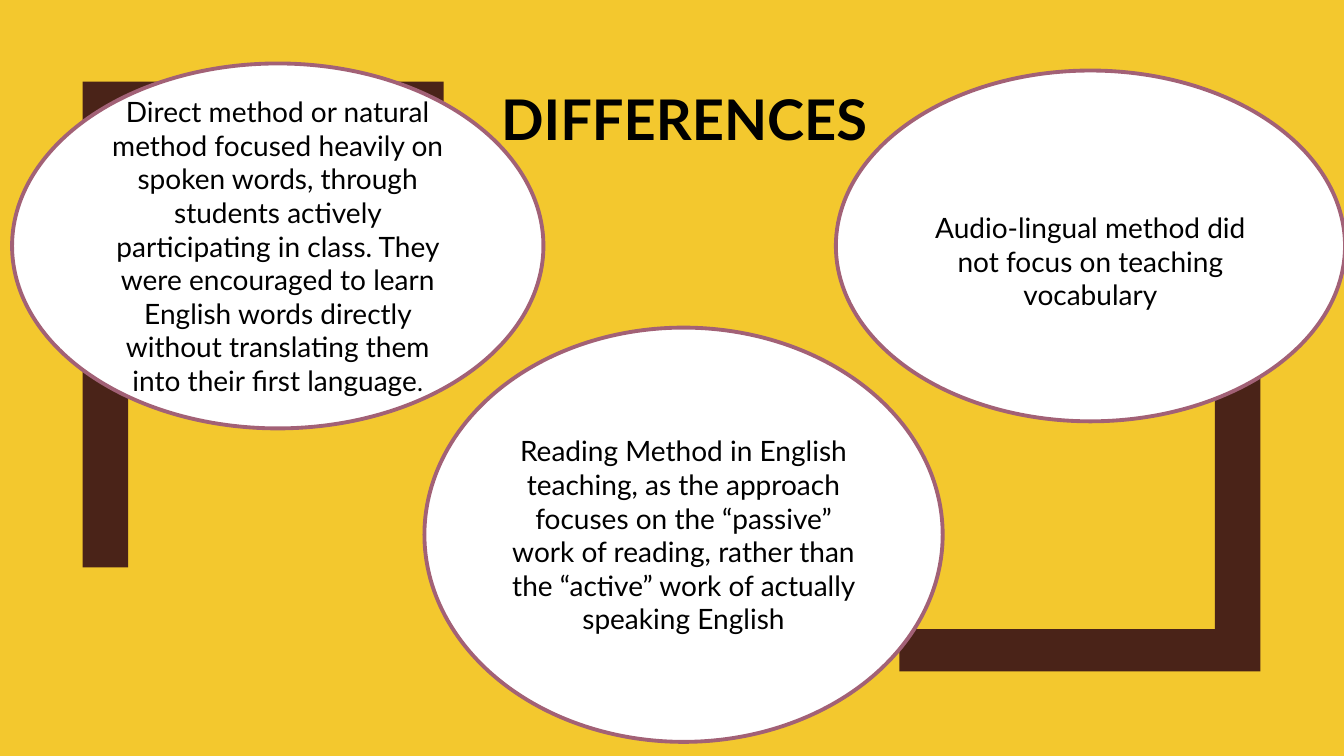
from pptx import Presentation
from pptx.dml.color import RGBColor
from pptx.enum.shapes import MSO_SHAPE
from pptx.enum.text import MSO_ANCHOR, MSO_AUTO_SIZE, PP_ALIGN
from pptx.util import Inches, Pt

W, H = 13.33, 7.5
YELLOW, BROWN, MAUVE, WHITE, BLACK = "F3C82E", "4A2318", "A26176", "FFFFFF", "000000"
FONT = "Lato"

TITLE = ("DIFFERENCES", (4.86, 0.79, 3.85, 0.77))
# Each oval: box (left, top, width, height), top inset, runs of (text, size)
OVALS = [
    ((0.12, 0.63, 5.27, 3.62), 0.05, [
        ("Direct method or natural method focused heavily on spoken words, "
         "through students actively participating in class. They were encouraged "
         "to learn English words directly without translating them into their "
         "first language", 20), (".", 18)]),
    ((4.21, 3.25, 5.14, 4.11), 0.05, [
        ("Reading Method in English teaching, as the approach focuses on the "
         "“passive” work of reading, rather than the “active” work of actually "
         "speaking English", 20)]),
    ((8.29, 0.7, 5.05, 3.48), 0.35, [
        ("Audio-lingual method did not focus on teaching vocabulary", 20)]),
]
# Lower right bracket; the upper left one is the same turned by 180 degrees
BRACKET = [(12.05, 1.84), (12.5, 1.84), (12.5, 6.66),
           (8.92, 6.66), (8.92, 6.24), (12.05, 6.24)]
TURN = (13.32, 7.47)


def color(code):
    return RGBColor.from_string(code)


def paint(fill, code):
    fill.solid()
    fill.fore_color.rgb = color(code)


def write(tf, runs, anchor, top=0.05, bold=False):
    frame = {"word_wrap": True, "auto_size": MSO_AUTO_SIZE.NONE,
             "vertical_anchor": anchor, "margin_top": Inches(top),
             "margin_bottom": Inches(0.05), "margin_left": Inches(0.1),
             "margin_right": Inches(0.1)}
    for name, value in frame.items():
        setattr(tf, name, value)
    p = tf.paragraphs[0]
    p.alignment = PP_ALIGN.CENTER
    for text, size in runs:
        r = p.add_run()
        r.text = text
        for name, value in {"name": FONT, "size": Pt(size), "bold": bold}.items():
            setattr(r.font, name, value)
        r.font.color.rgb = color(BLACK)


prs = Presentation()
prs.slide_width, prs.slide_height = Inches(W), Inches(H)
s = prs.slides.add_slide(prs.slide_layouts[5])
paint(s.background.fill, YELLOW)

# Corner brackets
turned = [(TURN[0] - x, TURN[1] - y) for x, y in BRACKET]
for points in (BRACKET, turned):
    start, *rest = [(Inches(x), Inches(y)) for x, y in points]
    builder = s.shapes.build_freeform(*start)
    builder.add_line_segments(rest, close=True)
    sp = builder.convert_to_shape()
    sp.shadow.inherit = False
    paint(sp.fill, BROWN)
    sp.line.fill.background()

# Method ovals
for box, top, runs in OVALS:
    sp = s.shapes.add_shape(MSO_SHAPE.OVAL, *map(Inches, box))
    sp.shadow.inherit = False
    paint(sp.fill, WHITE)
    paint(sp.line.fill, MAUVE)
    sp.line.width = Pt(2.75)
    write(sp.text_frame, runs, MSO_ANCHOR.MIDDLE, top)

# Title
text, box = TITLE
title = s.shapes.title
for name, value in zip(("left", "top", "width", "height"), box):
    setattr(title, name, Inches(value))
write(title.text_frame, [(text, 40)], MSO_ANCHOR.TOP, bold=True)

prs.save("out.pptx")
